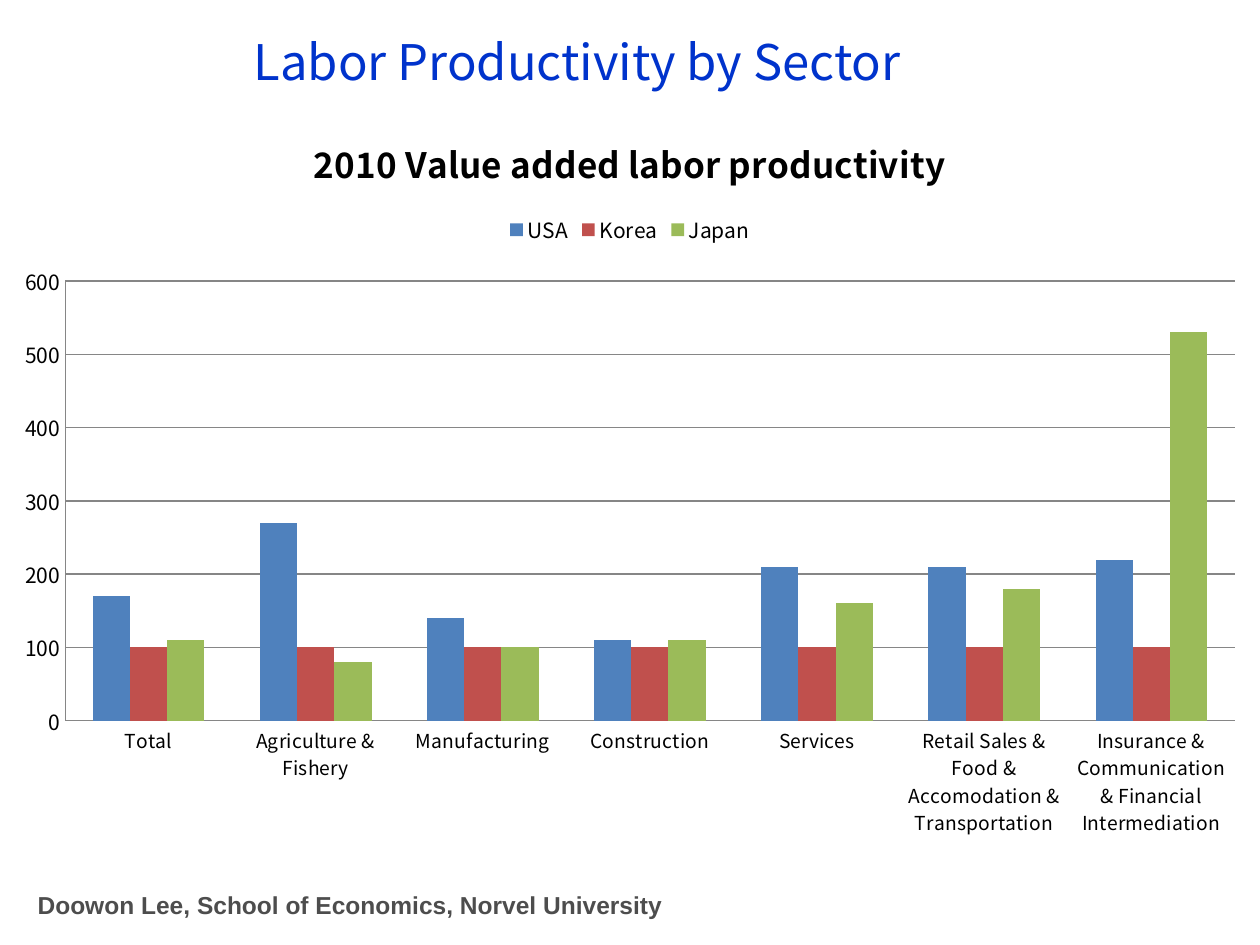
"""Build a slide comparing labor productivity by sector in three countries."""
from pptx import Presentation
from pptx import util as u
from pptx.chart import data as cd
from pptx.dml import color
from pptx.enum import chart as ec
from pptx.enum import text

PX = 914400 / 126
THEME = {
    "font": "Noto Sans CJK KR", "credit_font": "Arial",
    "title": "0033CC", "credit": "4D4D4D", "ink": "000000", "paper": "FFFFFF", "grid": "868686",
    "title_size": 28, "chart_title_size": 20, "credit_size": 14, "label_size": 12, "category_size": 11,
}
CATEGORIES = [
    "Total", "Agriculture & Fishery", "Manufacturing", "Construction", "Services",
    "Retail Sales & Food & Accomodation & Transportation",
    "Insurance & Communication & Financial Intermediation",
]
SERIES = [
    ("USA", "4F81BD", (170, 270, 140, 110, 210, 210, 220)),
    ("Korea", "C0504D", (100,) * len(CATEGORIES)),
    ("Japan", "9BBB59", (110, 80, 100, 110, 160, 180, 530)),
]


def box(*lengths):
    return [u.Emu(round(n * PX)) for n in lengths]


def style(font, size, ink="ink", face="font", bold=False):
    font.name = THEME[face]
    font.size = u.Pt(THEME[size])
    font.bold = bold
    font.color.rgb = color.RGBColor.from_string(THEME[ink])


prs = Presentation()
prs.slide_width, prs.slide_height = box(1260, 945)
s = prs.slides.add_slide(prs.slide_layouts[5])

title = s.shapes.title
title.left, title.top, title.width, title.height = box(10, 20, 1134, 82)
tf = title.text_frame
tf.text = "Labor Productivity by Sector"
tf.vertical_anchor = text.MSO_ANCHOR.MIDDLE
p = tf.paragraphs[0]
p.alignment = text.PP_ALIGN.CENTER
style(p.font, "title_size", "title")

table = s.shapes.add_table(1, 1, *box(25, 879, 675, 49)).table
table.first_row = table.horz_banding = False
cell = table.cell(0, 0)
cell.fill.solid()
cell.fill.fore_color.rgb = color.RGBColor.from_string(THEME["paper"])
cell.vertical_anchor = text.MSO_ANCHOR.MIDDLE
cell.text = "Doowon Lee, School of Economics, Norvel University"
p = cell.text_frame.paragraphs[0]
p.line_spacing = 1.2
p.space_before = u.Pt(3)
style(p.font, "credit_size", "credit", "credit_font", True)

data = cd.CategoryChartData()
data.categories = CATEGORIES
for name, fill, values in SERIES:
    data.add_series(name, values)
chart = s.shapes.add_chart(ec.XL_CHART_TYPE.COLUMN_CLUSTERED, *box(0, 106, 1260, 745), data).chart
style(chart.font, "label_size")

chart.has_title = True
tf = chart.chart_title.text_frame
tf.text = "2010 Value added labor productivity"
style(tf.paragraphs[0].font, "chart_title_size", bold=True)
chart.chart_title.include_in_layout = False

chart.has_legend = True
chart.legend.position = ec.XL_LEGEND_POSITION.TOP
chart.legend.include_in_layout = False
style(chart.legend.font, "label_size")

plot = chart.plots[0]
plot.gap_width = 150
plot.overlap = 0
plot.vary_by_categories = False
for series, (name, fill, values) in zip(plot.series, SERIES):
    series.format.fill.solid()
    series.format.fill.fore_color.rgb = color.RGBColor.from_string(fill)

chart.value_axis.minimum_scale = 0
chart.value_axis.maximum_scale = 600
chart.value_axis.major_unit = 100
chart.value_axis.has_major_gridlines = True
for axis, size in ((chart.category_axis, "category_size"), (chart.value_axis, "label_size")):
    axis.major_tick_mark = axis.minor_tick_mark = ec.XL_TICK_MARK.NONE
    style(axis.tick_labels.font, size)
for line in (chart.category_axis.format.line, chart.value_axis.format.line,
             chart.value_axis.major_gridlines.format.line):
    line.width = u.Pt(0.75)
    line.color.rgb = color.RGBColor.from_string(THEME["grid"])

prs.save("out.pptx")
